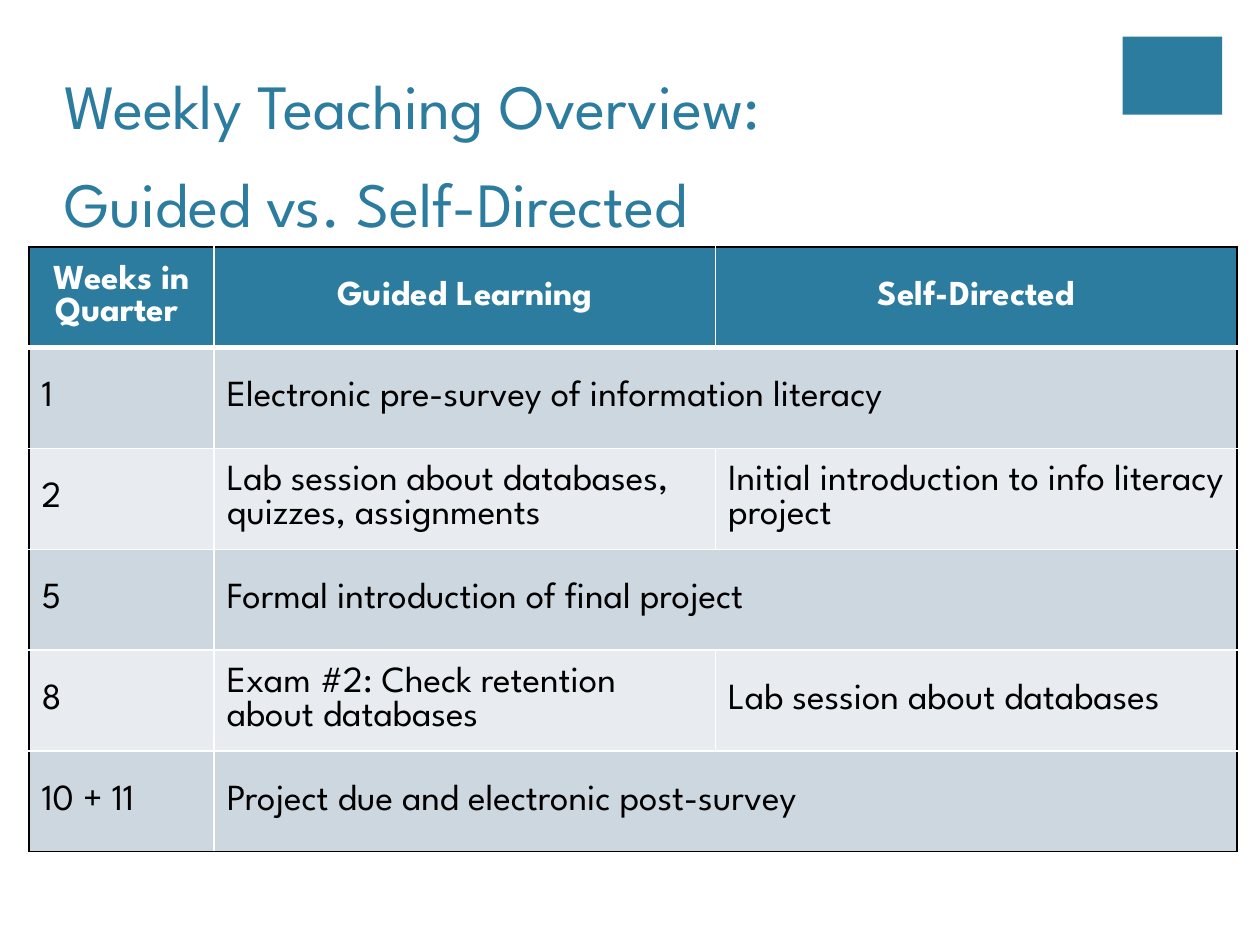
from lxml.etree import SubElement
from pptx import Presentation
from pptx.dml.color import RGBColor
from pptx.enum.shapes import MSO_SHAPE
from pptx.enum.text import MSO_ANCHOR, MSO_AUTO_SIZE, PP_ALIGN
from pptx.oxml.ns import qn
from pptx.util import Inches, Pt

FONT = "League Spartan"
TEAL, WHITE, BLACK = "2C7C9F", "FFFFFF", "000000"
BANDS = ["CDD7DF", "E8ECF0"]
COLUMNS = [1.47, 3.98, 4.14]
ROW_HEIGHT = 0.8
HEADER = ["Weeks in Quarter ", "Guided Learning", "Self-Directed"]
WEEKS = [
    ["1", "Electronic pre-survey of information literacy"],
    ["2", "Lab session about databases, quizzes, assignments",
     "Initial introduction to info literacy project"],
    ["5", "Formal introduction of final project"],
    ["8", "Exam #2: Check retention about databases", "Lab session about databases"],
    ["10 + 11", "Project due and electronic post-survey"],
]


def color(value):
    return RGBColor.from_string(value)


def add_run(para, text, size, ink, bold=False):
    span = para.add_run()
    span.text = text
    span.font.name = FONT
    span.font.size = Pt(size)
    span.font.bold = bold
    span.font.color.rgb = color(ink)


def add_corner_block(page):
    box = page.shapes.add_shape(
        MSO_SHAPE.RECTANGLE, Inches(8.91), Inches(0.29), Inches(0.79), Inches(0.62))
    box.shadow.inherit = False
    box.fill.solid()
    box.fill.fore_color.rgb = color(TEAL)
    box.line.fill.background()


def format_title(page, lines):
    title = page.shapes.title
    title.left, title.top = Inches(0.41), Inches(0.71)
    title.width, title.height = Inches(8.08), Inches(1.25)
    frame = title.text_frame
    frame.auto_size = MSO_AUTO_SIZE.NONE
    frame.vertical_anchor = MSO_ANCHOR.BOTTOM
    para = frame.paragraphs[0]
    para.alignment = PP_ALIGN.LEFT
    para.line_spacing = 1.3
    for number, line in enumerate(lines):
        if number:
            para.add_line_break()
        add_run(para, line, 36, TEAL)


def set_borders(cell, borders):
    properties = cell._tc.get_or_add_tcPr()
    for position, side in enumerate("LRTB"):
        ink, width = borders[side]
        line = SubElement(properties, qn(f"a:ln{side}"), w=str(Pt(width)))
        fill = SubElement(line, qn("a:solidFill"))
        SubElement(fill, qn("a:srgbClr"), val=ink)
        properties.insert(position, line)


def format_cell(cell, fill, borders):
    cell.vertical_anchor = MSO_ANCHOR.MIDDLE
    cell.fill.solid()
    cell.fill.fore_color.rgb = color(fill)
    set_borders(cell, borders)


def find_borders(row, column, last_row, last_column):
    outer, inner = (BLACK, 1), (WHITE, 1)
    rule = (WHITE, 3)
    return {
        "L": inner if column else outer,
        "R": outer if column == last_column else inner,
        "T": outer if row == 0 else rule if row == 1 else inner,
        "B": rule if row == 0 else outer if row == last_row else inner,
    }


def add_schedule(page):
    rows = [HEADER] + WEEKS
    last_row, last_column = len(rows) - 1, len(COLUMNS) - 1
    table = page.shapes.add_table(
        len(rows), len(COLUMNS), Inches(0.23), Inches(1.96),
        Inches(sum(COLUMNS)), Inches(ROW_HEIGHT * len(rows))).table
    for column, width in zip(table.columns, COLUMNS):
        column.width = Inches(width)
    for row, texts in enumerate(rows):
        table.rows[row].height = Inches(ROW_HEIGHT)
        fill = BANDS[(row - 1) % 2] if row else TEAL
        merged = len(texts) < len(COLUMNS)
        for column in range(len(COLUMNS)):
            edge = last_column if merged and column else column
            format_cell(table.cell(row, column), fill,
                        find_borders(row, edge, last_row, last_column))
        if merged:
            table.cell(row, 1).merge(table.cell(row, last_column))
        for column, text in enumerate(texts):
            para = table.cell(row, column).text_frame.paragraphs[0]
            if row:
                add_run(para, text, 21, BLACK)
            else:
                para.alignment = PP_ALIGN.CENTER
                add_run(para, text, 20, WHITE, bold=True)


def main():
    deck = Presentation()
    deck.slide_width, deck.slide_height = Inches(10), Inches(7.5)
    page = deck.slides.add_slide(deck.slide_layouts[5])
    add_corner_block(page)
    format_title(page, ["Weekly Teaching Overview: ", "Guided vs. Self-Directed"])
    add_schedule(page)
    deck.save("out.pptx")


if __name__ == "__main__":
    main()
